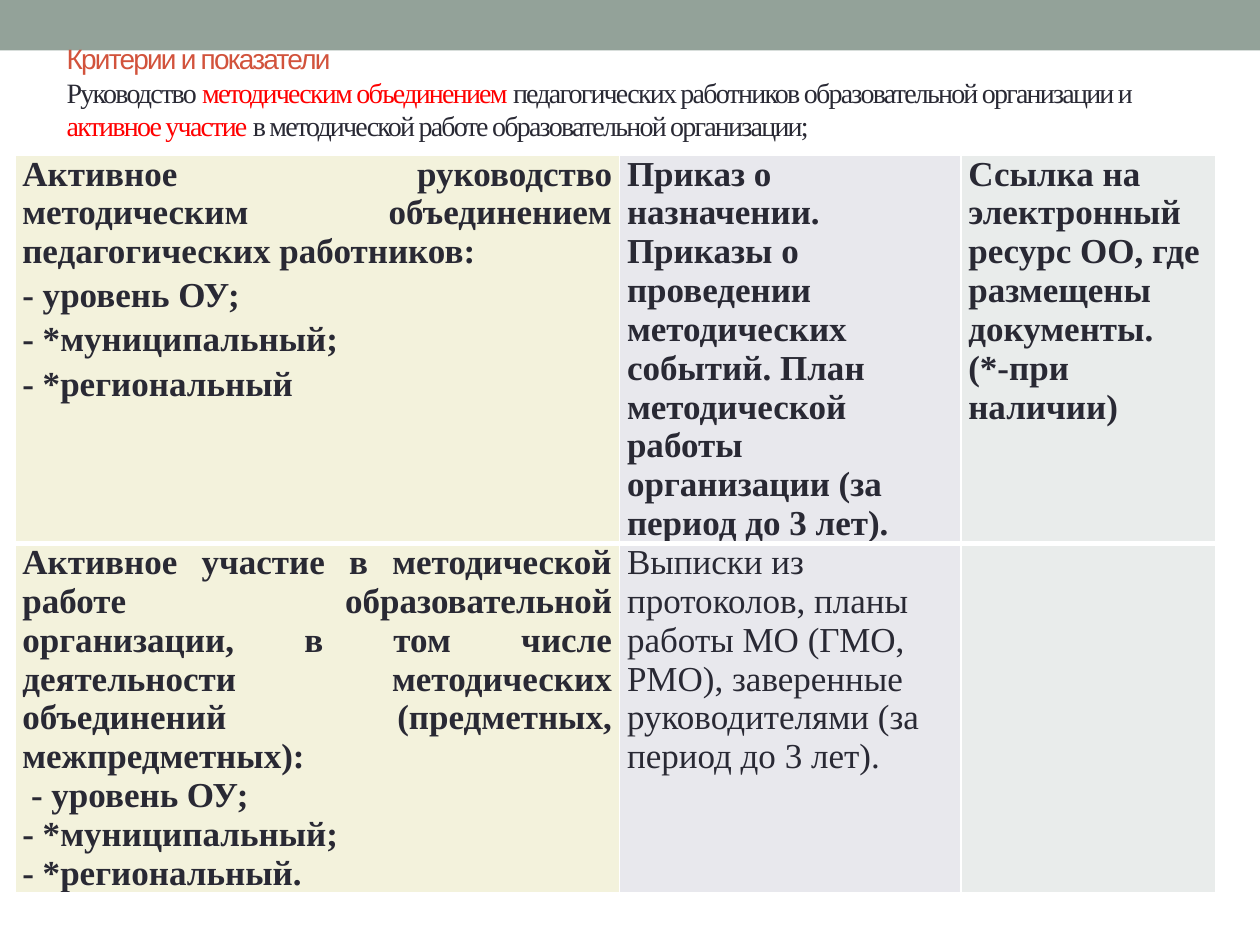
"""Builds a slide with criteria for leading and joining methodical work."""
import pptx
import pptx.dml.color
import pptx.enum.shapes
import pptx.enum.text
import pptx.oxml
import pptx.oxml.ns
import pptx.util

Cm, Pt = pptx.util.Cm, pptx.util.Pt
RGBColor = pptx.dml.color.RGBColor
Align = pptx.enum.text.PP_ALIGN

DARK = RGBColor(0x29, 0x29, 0x34)
RUST = RGBColor(0xD2, 0x53, 0x3C)
RED = RGBColor(0xFF, 0x00, 0x00)
SAGE = RGBColor(0x93, 0xA2, 0x99)
WHITE = RGBColor(0xFF, 0xFF, 0xFF)
FILLS = [RGBColor(0xF3, 0xF2, 0xDC), RGBColor(0xE8, 0xE8, 0xED), RGBColor(0xE9, 0xEC, 0xEB)]
SERIF = "Times New Roman"

TITLE = [
    ("Критерии и показатели\n", RUST, "Arial"),
    ("Руководство ", DARK, SERIF),
    ("методическим объединением ", RED, SERIF),
    ("педагогических работников образовательной организации и ", DARK, SERIF),
    ("активное участие ", RED, SERIF),
    ("в методической работе образовательной организации;", DARK, SERIF),
]
ROWS = [
    [
        ["Активное руководство методическим объединением педагогических работников:",
         "- уровень ОУ;", "- *муниципальный;", "- *региональный"],
        ["Приказ о назначении. Приказы о проведении методических событий. "
         "План методической работы организации (за период до 3 лет)."],
        ["Ссылка на электронный ресурс ОО, где размещены документы.", "(*-при наличии)"],
    ],
    [
        ["Активное участие в методической работе образовательной организации, в том числе "
         "деятельности методических объединений (предметных, межпредметных):",
         " - уровень ОУ;", "- *муниципальный;", "- *региональный."],
        ["Выписки из протоколов, планы работы МО (ГМО, РМО), заверенные руководителями "
         "(за период до 3 лет)."],
        [],
    ],
]
WIDTHS = [12.19, 6.88, 5.13]
HEIGHTS = [4.57, 5.36]


def write(para, text, size=20, color=DARK, font=SERIF, bold=False, track=0):
    run = para.add_run()
    run.text = text.rstrip("\n")
    run.font.size = Pt(size)
    run.font.name = font
    run.font.bold = bold
    run.font.color.rgb = color
    if track:
        run.font._element.set("spc", str(track * 100))
    if text.endswith("\n"):
        para.add_line_break()


def edge(cell, top, bottom):
    props = cell._tc.get_or_add_tcPr()
    for side, width in (("L", 1), ("R", 1), ("T", top), ("B", bottom)):
        props.append(pptx.oxml.parse_xml(
            f'<a:ln{side} {pptx.oxml.ns.nsdecls("a")} w="{Pt(width)}"><a:solidFill>'
            f'<a:srgbClr val="{WHITE}"/></a:solidFill></a:ln{side}>'))


def head(slide):
    bar = slide.shapes.add_shape(
        pptx.enum.shapes.MSO_SHAPE.RECTANGLE, 0, 0, Cm(25.4), Cm(1.02))
    bar.shadow.inherit = False
    bar.fill.solid()
    bar.fill.fore_color.rgb = SAGE
    bar.line.fill.background()
    slide.shapes._spTree.insert(2, bar._element)

    title = slide.shapes.title
    title.left, title.top, title.width, title.height = Cm(1.09), Cm(0.85), Cm(23.9), Cm(2.44)
    frame = title.text_frame
    frame.word_wrap = True
    frame.auto_size = pptx.enum.text.MSO_AUTO_SIZE.NONE
    frame.vertical_anchor = pptx.enum.text.MSO_ANCHOR.TOP
    frame.margin_top = frame.margin_bottom = 0
    para = frame.paragraphs[0]
    para.alignment = Align.LEFT
    para.line_spacing = Pt(19)
    for text, color, font in TITLE:
        write(para, text, size=16, color=color, font=font, track=-1)


def grid(slide):
    table = slide.shapes.add_table(
        len(ROWS), len(WIDTHS), Cm(0.3), Cm(3.12), Cm(sum(WIDTHS)), Cm(sum(HEIGHTS))).table
    table.first_row = table.horz_banding = False
    for col, width in zip(table.columns, WIDTHS):
        col.width = Cm(width)
    for r, row in enumerate(ROWS):
        table.rows[r].height = Cm(HEIGHTS[r])
        for c, texts in enumerate(row):
            cell = table.cell(r, c)
            edge(cell, top=3 if r else 1, bottom=1 if r else 3)
            cell.fill.solid()
            cell.fill.fore_color.rgb = FILLS[c]
            cell.margin_left = cell.margin_right = Cm(0.15)
            cell.margin_top = cell.margin_bottom = 0
            frame = cell.text_frame
            for n, text in enumerate(texts):
                para = frame.add_paragraph() if n else frame.paragraphs[0]
                para.alignment = Align.LEFT if c else Align.JUSTIFY
                if c == 0 and (r == 0 or n == 0):
                    para.space_before = Pt(3)
                write(para, text, bold=r == 0 or c == 0)


def main():
    deck = pptx.Presentation()
    deck.slide_width, deck.slide_height = Cm(25.4), Cm(19.05)
    slide = deck.slides.add_slide(deck.slide_layouts[5])
    head(slide)
    grid(slide)
    deck.save("out.pptx")


if __name__ == "__main__":
    main()
